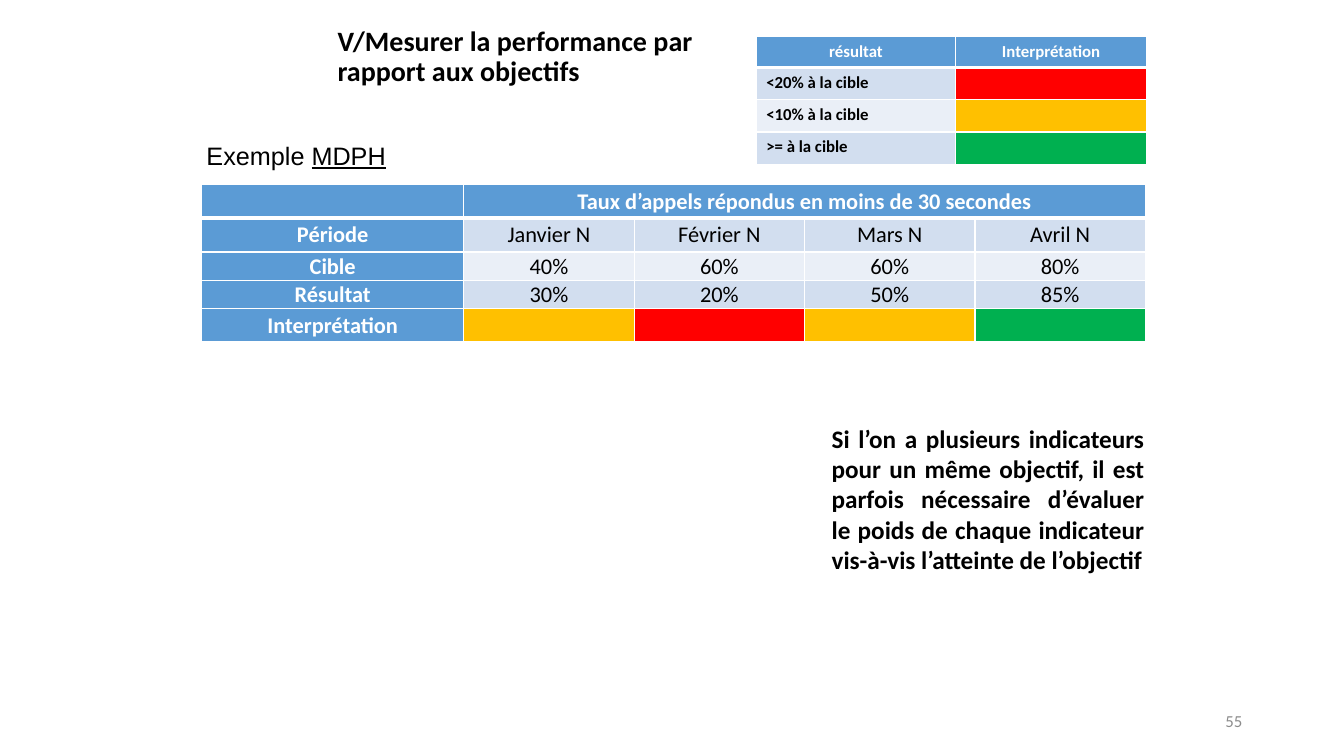
from lxml import etree
from pptx import Presentation
from pptx import util as u
from pptx.dml.color import RGBColor
from pptx.enum import text
from pptx.oxml.ns import qn

THEME = {
    "font": "Calibri", "label_font": "Arial",
    "black": "000000", "white": "FFFFFF", "grey": "8C8C8C",
    "header": "5B9BD5", "bands": ("D2DEEF", "EAEFF7"),
    "far": "FF0000", "near": "FFC000", "met": "00B050",
    "title": 20, "body": 18, "table": 16, "small": 12,
    "thin": 1, "thick": 3,
}
LEFT, CENTER, RIGHT, JUSTIFY = (
    text.PP_ALIGN.LEFT, text.PP_ALIGN.CENTER, text.PP_ALIGN.RIGHT, text.PP_ALIGN.JUSTIFY)
TOP, MIDDLE = text.MSO_ANCHOR.TOP, text.MSO_ANCHOR.MIDDLE

TITLE = "V/Mesurer la performance par rapport aux objectifs"
EXAMPLE = ("Exemple ", "MDPH")
ADVICE = ("Si l’on a plusieurs indicateurs pour un même objectif, il est parfois "
          "nécessaire d’évaluer le poids de chaque indicateur vis-à-vis l’atteinte de l’objectif")
PAGE_NUMBER = "55"

RATES = {
    "at": (2, 1.83), "columns": [2.6] + [1.69] * 4,
    "rows": [0.33, 0.34, 0.28, 0.28, 0.33],
    "size": THEME["table"], "margins": (0.01, 0.01, 0.01, 0), "anchor": MIDDLE,
    "align": CENTER, "bold": False, "label_column": True,
    "cells": [
        ["", "Taux d’appels répondus en moins de 30 secondes", "", "", ""],
        ["Période", "Janvier N", "Février N", "Mars N", "Avril N"],
        ["Cible", "40%", "60%", "60%", "80%"],
        ["Résultat", "30%", "20%", "50%", "85%"],
        ["Interprétation", "near", "far", "near", "met"],
    ],
}
LEGEND = {
    "at": (7.5, 0.36), "columns": [1.98, 1.89], "rows": [0.31] + [0.32] * 3,
    "size": THEME["small"], "margins": (0.1, 0.05, 0.1, 0.05), "anchor": TOP,
    "align": LEFT, "bold": True, "label_column": False,
    "cells": [
        ["résultat", "Interprétation"],
        ["<20% à la cible", "far"],
        ["<10% à la cible", "near"],
        [">= à la cible", "met"],
    ],
}
STATUSES = ("far", "near", "met")


def style(span, size, color, bold=False, font=THEME["font"]):
    span.font.name = font
    span.font.size = u.Pt(size)
    span.font.bold = bold
    span.font.color.rgb = RGBColor.from_string(color)


def add_text(page, at, spans, size, color=THEME["black"], bold=False, align=LEFT,
             anchor=TOP, font=THEME["font"], wrap=True):
    box = page.shapes.add_textbox(*map(u.Inches, at))
    box.text_frame.word_wrap = wrap
    box.text_frame.vertical_anchor = anchor
    para = box.text_frame.paragraphs[0]
    para.alignment = align
    for words in spans:
        span = para.add_run()
        span.text = words
        style(span, size, color, bold, font)
    return para


def set_borders(cell, row):
    properties = cell._tc.get_or_add_tcPr()
    widths = {"L": THEME["thin"], "R": THEME["thin"],
              "T": THEME["thick"] if row == 1 else THEME["thin"],
              "B": THEME["thick"] if row == 0 else THEME["thin"]}
    for side, width in widths.items():
        line = etree.SubElement(properties, qn(f"a:ln{side}"), w=str(u.Pt(width)))
        fill = etree.SubElement(line, qn("a:solidFill"))
        etree.SubElement(fill, qn("a:srgbClr"), val=THEME["white"])


def fill_cell(cell, words, row, column, spec_table):
    heading = row == 0 or (column == 0 and spec_table["label_column"])
    status = words in STATUSES
    set_borders(cell, row)
    cell.fill.solid()
    band = THEME["bands"][(row - 1) % 2]
    color = THEME[words] if status else THEME["header"] if heading else band
    cell.fill.fore_color.rgb = RGBColor.from_string(color)
    cell.margin_left, cell.margin_top, cell.margin_right, cell.margin_bottom = map(
        u.Inches, spec_table["margins"])
    cell.vertical_anchor = spec_table["anchor"]
    para = cell.text_frame.paragraphs[0]
    para.alignment = CENTER if heading else spec_table["align"]
    if words and not status:
        para.text = words
        style(para.runs[0], spec_table["size"], THEME["white" if heading else "black"],
              heading or spec_table["bold"])
    else:
        etree.SubElement(para._p, qn("a:endParaRPr"), sz=str(spec_table["size"] * 100))


def add_grid(page, grid):
    columns, rows = grid["columns"], grid["rows"]
    size = (sum(columns), sum(rows))
    table = page.shapes.add_table(
        len(rows), len(columns), *map(u.Inches, grid["at"] + size)).table
    for column, width in zip(table.columns, columns):
        column.width = u.Inches(width)
    for row, height in zip(table.rows, rows):
        row.height = u.Inches(height)
    for i, line in enumerate(grid["cells"]):
        for j, words in enumerate(line):
            fill_cell(table.cell(i, j), words, i, j, grid)
    return table


def main():
    deck = Presentation()
    deck.slide_width, deck.slide_height = u.Inches(13.33), u.Inches(7.5)
    page = deck.slides.add_slide(deck.slide_layouts[6])

    title = add_text(page, (3.25, 0.04, 4.41, 1.06), [TITLE], THEME["title"],
                     bold=True, anchor=MIDDLE)
    title.line_spacing = 0.9
    add_text(page, (9.42, 6.95, 3, 0.4), [PAGE_NUMBER], THEME["small"],
             THEME["grey"], align=RIGHT, anchor=MIDDLE)
    example = add_text(page, (1.95, 1.34, 2, 0.4), EXAMPLE, THEME["body"],
                       font=THEME["label_font"], wrap=False)
    example.runs[1].font.underline = True
    add_text(page, (8.15, 4.15, 3.3, 1.62), [ADVICE], THEME["body"],
             bold=True, align=JUSTIFY)

    rates = add_grid(page, RATES)
    rates.cell(0, 1).merge(rates.cell(0, 4))
    add_grid(page, LEGEND)
    deck.save("out.pptx")


if __name__ == "__main__":
    main()
